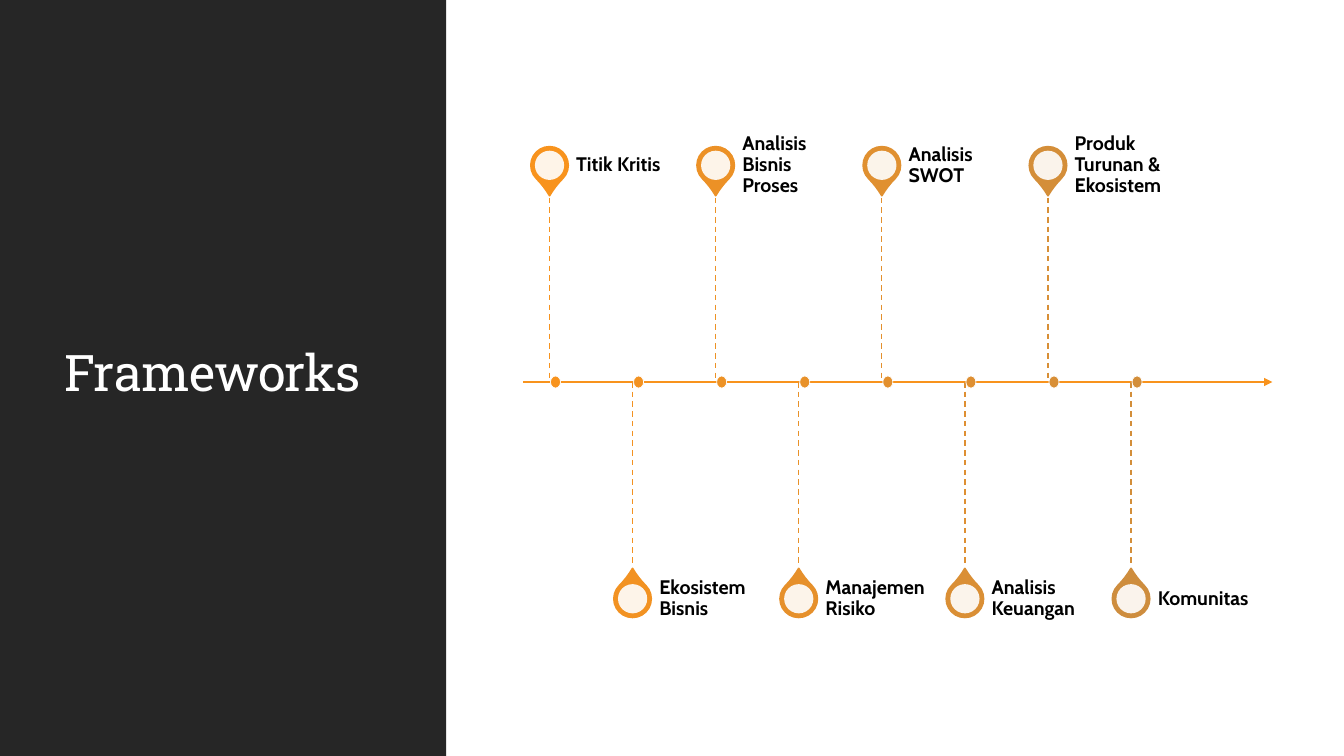
import pptx
import pptx.util
import pptx.dml.color
import pptx.enum.dml
import pptx.enum.shapes
import pptx.enum.text
import pptx.oxml.ns
from lxml import etree

Inches = pptx.util.Inches
Pt = pptx.util.Pt
RGB = pptx.dml.color.RGBColor
Kind = pptx.enum.shapes.MSO_SHAPE
Dash = pptx.enum.dml.MSO_LINE

DARK = RGB(0x26, 0x26, 0x26)
WHITE = RGB(0xFF, 0xFF, 0xFF)
BLACK = RGB(0, 0, 0)
ORANGE = RGB(0xF8, 0x93, 0x1D)
PIN_END = RGB(0xCE, 0x8D, 0x3E)
STEM_END = RGB(0xD3, 0x8E, 0x3A)

WIDE, HIGH = 13.33, 7.5
LEFT, STEP = 5.45, 0.824     # first column and column pitch
AXIS = 3.79                  # height of the time axis
REACH = 2.15                 # axis to the centre of a pin
STEM = 1.83                  # length of a dashed stem

STAGES = [
    "Titik Kritis", "Ekosistem Bisnis", "Analisis Bisnis Proses",
    "Manajemen Risiko", "Analisis SWOT", "Analisis Keuangan",
    "Produk Turunan & Ekosistem", "Komunitas",
]


def blend(start, end, share):
    return RGB(*(round(a + (b - a) * share) for a, b in zip(start, end)))


def assign(target, values):
    for name, value in values.items():
        setattr(target, name, value)


def add_node(parent, tag, **values):
    node = etree.SubElement(parent, pptx.oxml.ns.qn(tag))
    for name, value in values.items():
        node.set(name, value)
    return node


def add_shape(slide, kind, box, fill, line=None, width=0):
    shape = slide.shapes.add_shape(kind, *map(Inches, box))
    shape.shadow.inherit = False
    shape.fill.solid()
    shape.fill.fore_color.rgb = fill
    if line is None:
        shape.line.fill.background()
    else:
        shape.line.color.rgb = line
        shape.line.width = Pt(width)
    return shape


def add_disc(slide, x, y, wide, high, fill, *line):
    box = (x - wide / 2, y - high / 2, wide, high)
    return add_shape(slide, Kind.OVAL, box, fill, *line)


def add_line(slide, start, end, color, width, dash=None, arrow=False):
    line = slide.shapes.add_connector(
        pptx.enum.shapes.MSO_CONNECTOR.STRAIGHT, *map(Inches, start + end))
    line.line.color.rgb = color
    line.line.width = Pt(width)
    if dash:
        line.line.dash_style = dash
    if arrow:
        add_node(line.line._get_or_add_ln(), "a:tailEnd", type="triangle")
    add_node(line._element.spPr, "a:effectLst")


def add_text(slide, box, text, insets, style, color):
    frame = slide.shapes.add_textbox(*map(Inches, box)).text_frame
    sides = ("margin_left", "margin_top", "margin_right", "margin_bottom")
    assign(frame, dict(zip(sides, map(Inches, insets))))
    assign(frame, {"word_wrap": True,
                   "vertical_anchor": pptx.enum.text.MSO_ANCHOR.MIDDLE})
    para = frame.paragraphs[0]
    para.line_spacing = 0.9
    run = para.add_run()
    run.text = text
    assign(run.font, style)
    run.font.color.rgb = color
    return run


def add_pin(slide, x, y, turn, color):
    size = 0.37
    drop = add_shape(slide, Kind.TEAR, (x - size / 2, y - size / 2, size, size),
                     color, color, 1.25)
    drop.adjustments[0] = 1.15
    drop.rotation = turn
    # Slightly clear white centre
    disc = add_disc(slide, x, y, 0.29, 0.29, WHITE)
    tint = disc._element.spPr.find(".//" + pptx.oxml.ns.qn("a:srgbClr"))
    add_node(tint, "a:alpha", val="90000")


def add_stage(slide, index, text):
    share = index / (len(STAGES) - 1)
    x = LEFT + index * STEP
    side = -1 if index % 2 == 0 else 1      # even stages stand above the axis
    y = AXIS + side * REACH
    stem = blend(ORANGE, STEM_END, share)
    add_pin(slide, x, y, 135 if side < 0 else 315,
            blend(ORANGE, PIN_END, share))
    add_text(slide, (x + 0.265, y - 0.32, 1.13, 0.64), text, (0, 0, 0.1, 0),
             {"name": "Cabin", "size": Pt(14), "bold": True}, BLACK)
    ends = sorted([(x, AXIS), (x, AXIS + side * STEM)], key=lambda p: p[1])
    add_line(slide, *ends, stem, 1, Dash.DASH)
    add_disc(slide, x + 0.06, AXIS, 0.1, 0.12, stem, WHITE, 0.5)


def main():
    deck = pptx.Presentation()
    assign(deck, {"slide_width": Inches(WIDE), "slide_height": Inches(HIGH)})
    slide = deck.slides.add_slide(deck.slide_layouts[6])

    # Title panel
    add_shape(slide, Kind.RECTANGLE, (0, 0, WIDE * 0.332, HIGH), DARK)
    title = add_text(slide, (0.54, 0.57, 3.37, 6.31), "Frameworks",
                     (0.1, 0.05, 0.1, 0.05),
                     {"name": "Roboto Slab", "size": Pt(36)}, WHITE)
    title.font._element.set("spc", "-50")

    # Time axis and its stages
    add_line(slide, (5.19, AXIS), (12.62, AXIS), ORANGE, 1.5, arrow=True)
    for index, text in enumerate(STAGES):
        add_stage(slide, index, text)

    deck.save("out.pptx")


if __name__ == "__main__":
    main()
